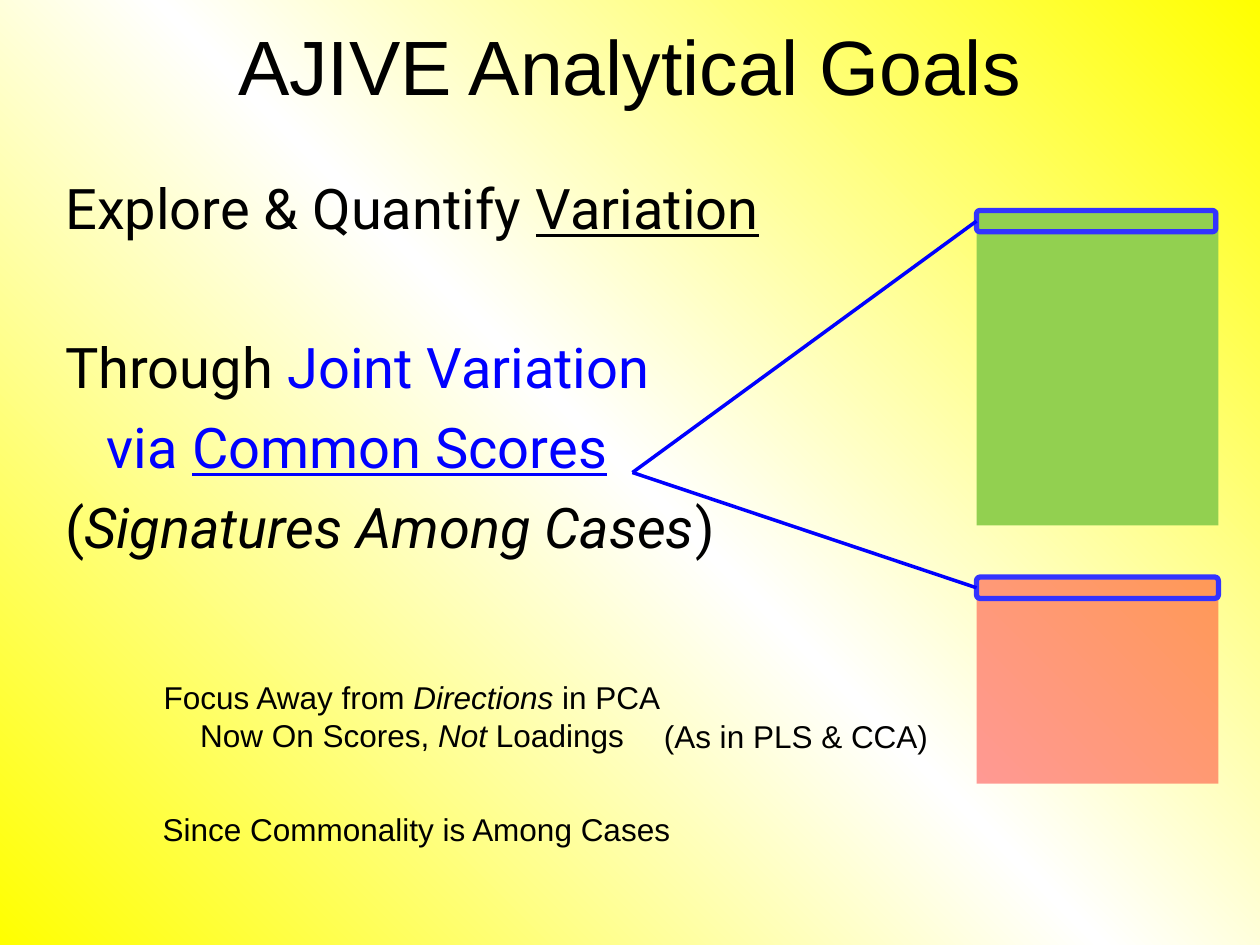
from copy import deepcopy
from dataclasses import dataclass, field
from typing import NamedTuple

from lxml.etree import SubElement
from pptx import Presentation
from pptx.dml.color import RGBColor
from pptx.enum.shapes import MSO_CONNECTOR, MSO_SHAPE
from pptx.enum.text import MSO_ANCHOR, MSO_AUTO_SIZE, PP_ALIGN
from pptx.oxml.ns import qn
from pptx.util import Pt

PX = 9144  # EMU per px, 100 px to the inch


@dataclass(frozen=True)
class Theme:
    ink: str = "000000"
    accent: str = "0000FF"
    frame: str = "3333FF"
    green: str = "92D050"
    red: str = "FF0000"
    edge: str = "FFFF00"
    middle: str = "FFFFFF"
    head_font: str = "Arial"
    body_font: str = "Roboto"
    title_size: int = 44
    body_size: int = 32
    note_size: int = 18
    gap: float = 7.4
    wide_gap: float = 52.3


THEME = Theme()


class Box(NamedTuple):
    left: int
    top: int
    width: int
    height: int

    def emu(self) -> list[int]:
        return [v * PX for v in self]


class Run(NamedTuple):
    text: str
    color: str = THEME.ink
    style: dict[str, bool] = {}


class Para(NamedTuple):
    runs: list[Run]
    before: float = 0
    indent: int = 0


@dataclass(frozen=True)
class Text:
    box: Box
    paras: list[Para]
    size: int = THEME.note_size
    font: str = THEME.head_font
    align: PP_ALIGN = PP_ALIGN.CENTER
    frame: dict = field(default_factory=lambda: {
        "word_wrap": False, "auto_size": MSO_AUTO_SIZE.SHAPE_TO_FIT_TEXT})


@dataclass(frozen=True)
class Block:
    box: Box
    fill: str
    alpha: int
    score_row: Box


ITALIC = {"italic": True}
UNDERLINE = {"underline": True}
SCORES_POINT = (502, 375)

BLOCKS = [
    Block(Box(775, 167, 192, 250), THEME.green, 100, Box(775, 167, 190, 17)),
    Block(Box(775, 458, 192, 164), THEME.red, 40, Box(775, 458, 192, 17)),
]

TEXTS = [
    Text(Box(50, 0, 900, 103), [Para([Run("AJIVE Analytical Goals")])], THEME.title_size,
         frame={"word_wrap": True, "vertical_anchor": MSO_ANCHOR.MIDDLE}),
    Text(Box(42, 133, 933, 575), [
        Para([Run("Explore & Quantify "), Run("Variation", style=UNDERLINE)], THEME.gap),
        Para([Run("Through "), Run("Joint Variation", THEME.accent)], THEME.wide_gap),
        Para([Run("via ", THEME.accent),
              Run("Common Scores", THEME.accent, UNDERLINE)], THEME.gap, 33),
        Para([Run("("), Run("Signatures Among Cases", style=ITALIC), Run(")")], THEME.gap),
    ], THEME.body_size, THEME.body_font, PP_ALIGN.LEFT, {"word_wrap": True}),
    Text(Box(118, 533, 418, 71), [
        Para([Run("Focus Away from "), Run("Directions", style=ITALIC), Run(" in PCA")]),
        Para([Run("Now On Scores, "), Run("Not", style=ITALIC), Run(" Loadings")]),
    ]),
    Text(Box(117, 638, 427, 40), [Para([Run("Since Commonality is Among Cases")])]),
    Text(Box(517, 564, 232, 40), [Para([Run("(As in PLS & CCA)")])], align=PP_ALIGN.LEFT),
]


def rgb(value: str) -> RGBColor:
    return RGBColor.from_string(value)


def apply(target, values: dict) -> None:
    for name, value in values.items():
        setattr(target, name, value)


def paint_background(s) -> None:
    """Diagonal gradient: edge colour, middle colour, edge colour."""
    fill = s.background.fill
    fill.gradient()
    fill.gradient_angle = 225
    first = fill.gradient_stops
    stop_list = s.background.fill._fill._gradFill.gsLst
    stop_list.insert(1, deepcopy(stop_list[0]))
    first = fill.gradient_stops
    for stop, color, position in zip(first, (THEME.edge, THEME.middle, THEME.edge), (0, 0.5, 1)):
        stop.color.rgb = rgb(color)
        stop.position = position


def add_block(s, block: Block) -> None:
    sp = s.shapes.add_shape(MSO_SHAPE.RECTANGLE, *block.box.emu())
    sp.shadow.inherit = False
    sp.fill.solid()
    sp.fill.fore_color.rgb = rgb(block.fill)
    sp.line.fill.background()
    if block.alpha < 100:
        color = sp._element.spPr.find(f"{qn('a:solidFill')}/{qn('a:srgbClr')}")
        SubElement(color, qn("a:alpha"), val=str(block.alpha * 1000))


def add_score_row(s, box: Box):
    sp = s.shapes.add_shape(MSO_SHAPE.ROUNDED_RECTANGLE, *box.emu())
    sp.shadow.inherit = False
    sp.fill.background()
    sp.line.color.rgb = rgb(THEME.frame)
    sp.line.width = Pt(3)
    return sp


def add_pointer(s, row) -> None:
    """Line from the left side of a score row to the words it shows."""
    x, y = (v * PX for v in SCORES_POINT)
    line = s.shapes.add_connector(MSO_CONNECTOR.STRAIGHT, row.left, row.top, x, y)
    line.begin_connect(row, 1)
    line.line.color.rgb = rgb(THEME.accent)
    line.line.width = Pt(2)
    SubElement(line._element.spPr, qn("a:effectLst"))


def add_text(s, text: Text) -> None:
    tf = s.shapes.add_textbox(*text.box.emu()).text_frame
    apply(tf, text.frame)
    for i, para in enumerate(text.paras):
        p = tf.add_paragraph() if i else tf.paragraphs[0]
        apply(p, {"alignment": text.align, "space_before": Pt(para.before)})
        if para.indent:
            p._p.get_or_add_pPr().set("marL", str(para.indent * PX))
        for run in para.runs:
            r = p.add_run()
            r.text = run.text
            apply(r.font, {"name": text.font, "size": Pt(text.size), **run.style})
            r.font.color.rgb = rgb(run.color)


def main() -> None:
    prs = Presentation()
    apply(prs, {"slide_width": 1000 * PX, "slide_height": 750 * PX})
    s = prs.slides.add_slide(prs.slide_layouts[6])
    paint_background(s)
    for block in BLOCKS:
        add_block(s, block)
    for block in BLOCKS:
        add_pointer(s, add_score_row(s, block.score_row))
    for text in TEXTS:
        add_text(s, text)
    prs.save("out.pptx")


if __name__ == "__main__":
    main()
